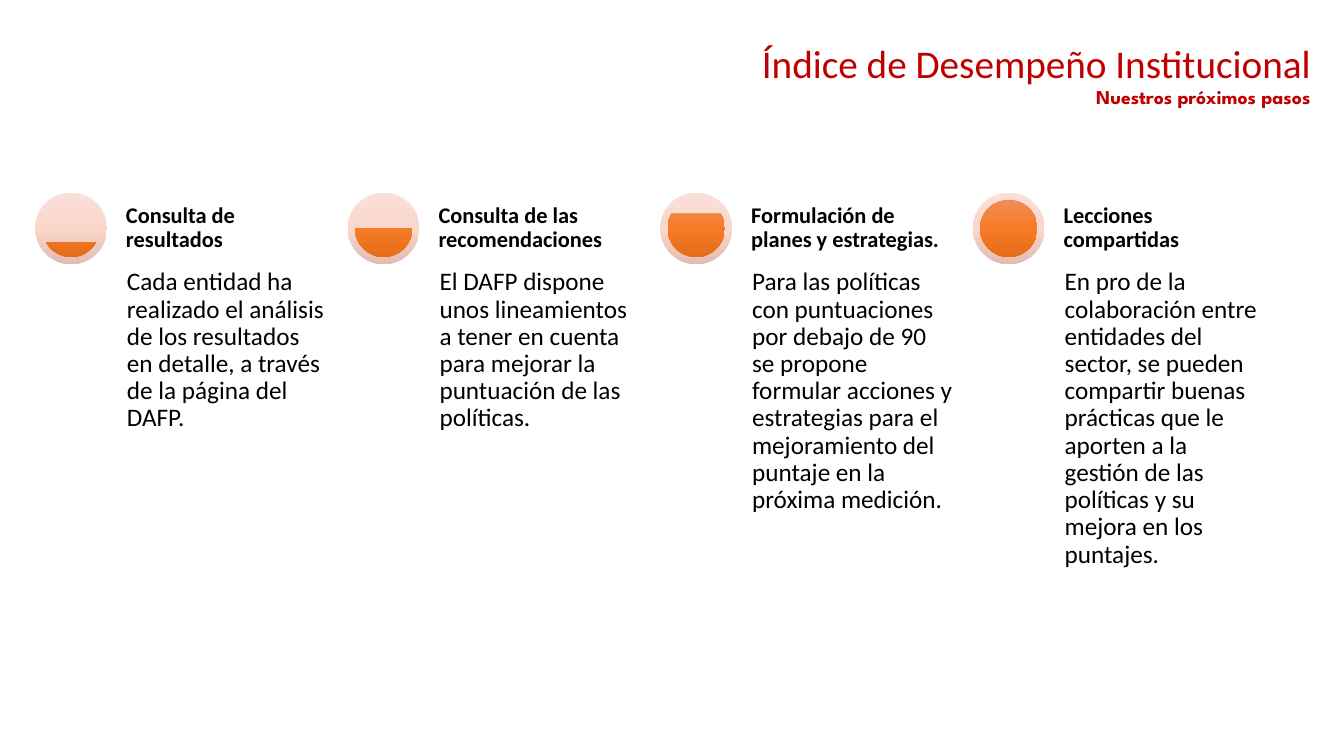
from copy import deepcopy
from dataclasses import dataclass
from math import asin, degrees

from pptx import Presentation
from pptx.dml.color import RGBColor
from pptx.enum.shapes import MSO_SHAPE as SHAPE
from pptx.enum.text import MSO_ANCHOR as ANCHOR, MSO_AUTO_SIZE as AUTO_SIZE, PP_ALIGN as ALIGN
from pptx.oxml.ns import qn
from pptx.util import Inches, Pt


@dataclass(frozen=True)
class Theme:
    font: str = "Calibri"
    accent_font: str = "League Spartan"
    red: str = "C00000"
    text: str = "000000"
    disc: tuple = ("FAE0D8", "FAD6CB", "E2BCB1")
    level: tuple = ("F18C57", "F67B28", "E56C19")
    title_size: int = 28
    subtitle_size: int = 14
    heading_size: int = 16
    body_size: int = 18
    line_spacing: float = 0.9


THEME = Theme()
STEPS = [
    ("Consulta de resultados",
     "Cada entidad ha realizado el análisis de los resultados en detalle, "
     "a través de la página del DAFP."),
    ("Consulta de las recomendaciones",
     "El DAFP dispone unos lineamientos a tener en cuenta para mejorar la "
     "puntuación de las políticas."),
    ("Formulación de planes y estrategias.",
     "Para las políticas con puntuaciones por debajo de 90 se propone formular "
     "acciones y estrategias para el mejoramiento del puntaje en la próxima medición."),
    ("Lecciones compartidas",
     "En pro de la colaboración entre entidades del sector, se pueden compartir "
     "buenas prácticas que le aporten a la gestión de las políticas y su mejora "
     "en los puntajes."),
]


def format_paragraph(p, font, size, color, bold=False, align=ALIGN.LEFT):
    p.alignment = align
    p.line_spacing = THEME.line_spacing
    p.space_before = Pt(0)
    for r in p.runs:
        r.font.name, r.font.size, r.font.bold = font, Pt(size), bold
        r.font.color.rgb = RGBColor.from_string(color)


def add_title(s, x, y, w, h):
    title = s.shapes.title
    title.left, title.top, title.width, title.height = map(Inches, (x, y, w, h))
    tf = title.text_frame
    tf.text = "Índice de Desempeño Institucional\nNuestros próximos pasos"
    tf.auto_size, tf.vertical_anchor = AUTO_SIZE.NONE, ANCHOR.MIDDLE
    heading, subtitle = tf.paragraphs
    format_paragraph(heading, THEME.font, THEME.title_size, THEME.red, align=ALIGN.RIGHT)
    format_paragraph(subtitle, THEME.accent_font, THEME.subtitle_size, THEME.red, True, ALIGN.RIGHT)


def add_text(s, x, y, w, h, text, size, inset, bold=False, anchor=ANCHOR.TOP):
    tf = s.shapes.add_textbox(*map(Inches, (x, y, w, h))).text_frame
    tf.word_wrap, tf.vertical_anchor = True, anchor
    tf.margin_left = tf.margin_right = tf.margin_top = tf.margin_bottom = Inches(inset)
    tf.text = text
    format_paragraph(tf.paragraphs[0], THEME.font, size, THEME.text, bold)


def add_disc(s, kind, x, y, size, colors):
    """Add a round shape with an even top-to-bottom gradient."""
    sp = s.shapes.add_shape(kind, *map(Inches, (x, y, size, size)))
    sp.shadow.inherit = False
    sp.line.fill.background()
    sp.fill.gradient()
    sp.fill.gradient_angle = 270
    stops = sp._element.spPr.find(".//" + qn("a:gsLst"))
    stops.insert(1, deepcopy(stops[0]))
    for i, (stop, color) in enumerate(zip(sp.fill.gradient_stops, colors)):
        stop.position = i / (len(colors) - 1)
        stop.color.rgb = RGBColor.from_string(color)
    return sp


def add_gauge(s, x, y, size, share):
    """Add a disc filled from the bottom up to the given share of its height."""
    add_disc(s, SHAPE.OVAL, x, y, size, THEME.disc)
    rim = size / 10
    chord = add_disc(s, SHAPE.CHORD, x + rim, y + rim, size - 2 * rim, THEME.level)
    angle = degrees(asin(1 - 2 * share))
    for i, end in enumerate((angle % 360, 180 - angle)):
        chord.adjustments[i] = round(end * 0.6, 2)  # 60000ths of a degree / 100000


def add_step(s, x, y, w, h, heading, body, share):
    disc, indent = 0.71, 0.86
    add_gauge(s, x, y, disc, share)
    add_text(s, x + indent, y + disc, w - indent, h - disc, body, THEME.body_size, 0.05)
    add_text(s, x + indent, y, w - indent, disc, heading, THEME.heading_size, 0.04,
             True, ANCHOR.MIDDLE)


def add_steps(s, x, y, w, h):
    gap = 0.14
    pitch = (w + gap) / len(STEPS)
    for i, (heading, body) in enumerate(STEPS):
        add_step(s, x + i * pitch, y, pitch - gap, h, heading, body, (i + 1) / len(STEPS))


def main():
    prs = Presentation()
    prs.slide_width, prs.slide_height = Inches(13.33), Inches(7.5)
    s = prs.slides.add_slide(prs.slide_layouts[5])
    add_title(s, 0.99, 0.26, 12.11, 1)
    add_steps(s, 0.35, 1.91, 12.26, 3.69)
    prs.save("out.pptx")


if __name__ == "__main__":
    main()
